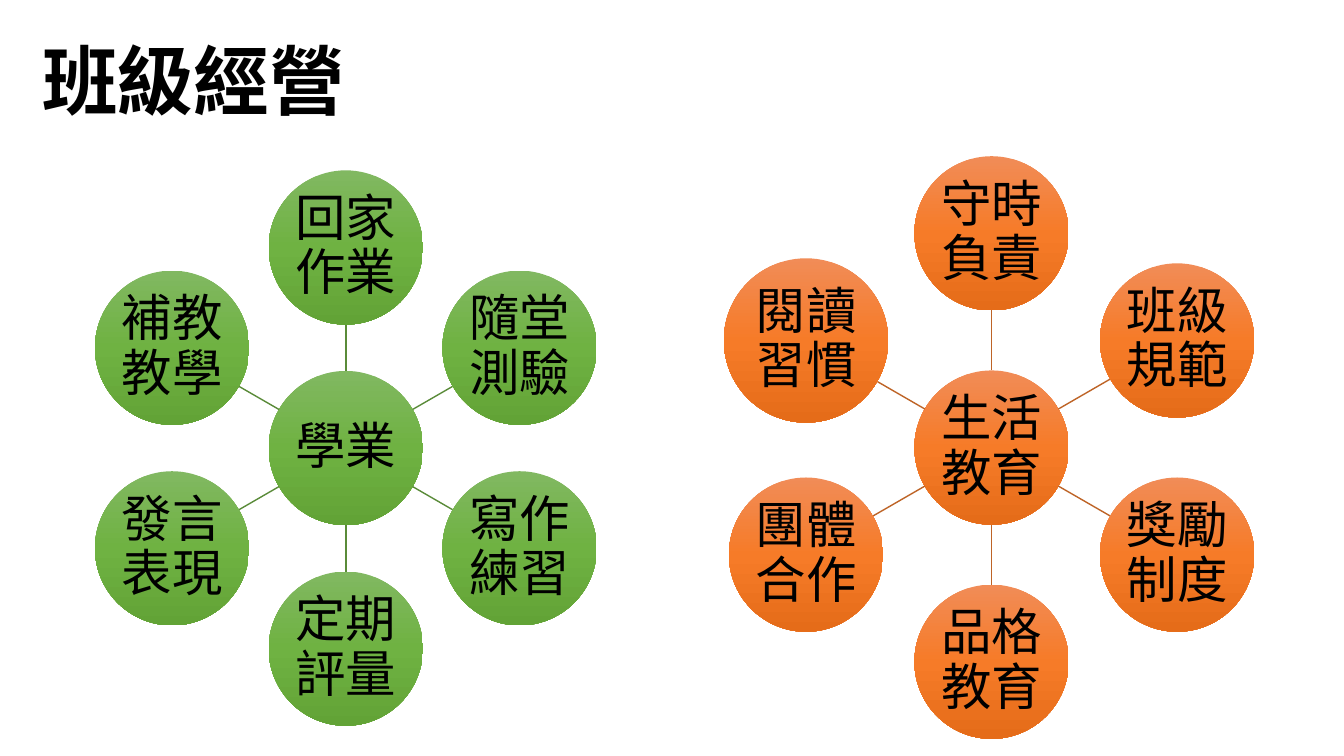
import copy
import math
from dataclasses import dataclass

import pptx
import pptx.dml.color
import pptx.enum.shapes
import pptx.enum.text
import pptx.oxml.ns
import pptx.util
from lxml import etree

Inches = pptx.util.Inches
Pt = pptx.util.Pt
qn = pptx.oxml.ns.qn


@dataclass(frozen=True)
class Theme:
    text: str = "000000"
    green: tuple = ("81B861", "6FB242", "62A336")
    green_line: str = "5A8B39"
    orange: tuple = ("F18C57", "F67B28", "E56C19")
    orange_line: str = "BE6427"
    title_font: str = "Calibri"
    body_font: str = "Noto Sans CJK SC"
    title_size: int = 54
    body_size: int = 36


THEME = Theme()


def rgb(value):
    return pptx.dml.color.RGBColor.from_string(value)


def apply_format(target, values):
    for name, value in values.items():
        setattr(target, name, value)


def write_text(shape, text, frame_format, paragraph_format, font_format):
    frame = shape.text_frame
    apply_format(frame, frame_format)
    paragraph = frame.paragraphs[0]
    apply_format(paragraph, {"line_spacing": 0.9, **paragraph_format})
    run = paragraph.add_run()
    run.text = text
    apply_format(run.font, font_format)
    run.font.color.rgb = rgb(THEME.text)
    east_asian = etree.SubElement(run.font._element, qn("a:ea"))
    east_asian.set("typeface", THEME.body_font)


def fill_gradient(shape, colours):
    shape.fill.gradient()
    shape.fill.gradient_angle = 270
    stop_list = shape._element.spPr.find(".//" + qn("a:gsLst"))
    stop_list.insert(1, copy.deepcopy(stop_list[0]))
    for index, (stop, colour) in enumerate(zip(shape.fill.gradient_stops, colours)):
        stop.position = index / 2
        stop.color.rgb = rgb(colour)


def add_title(slide, text, left, top, width, height):
    title = slide.shapes.title
    apply_format(title, {"left": Inches(left), "top": Inches(top),
                         "width": Inches(width), "height": Inches(height)})
    write_text(
        title, text,
        {"vertical_anchor": pptx.enum.text.MSO_ANCHOR.MIDDLE,
         "auto_size": pptx.enum.text.MSO_AUTO_SIZE.NONE},
        {"alignment": pptx.enum.text.PP_ALIGN.LEFT},
        {"name": THEME.title_font, "size": Pt(THEME.title_size), "bold": True})


def add_circle(slide, text, x, y, diameter, colours):
    circle = slide.shapes.add_shape(
        pptx.enum.shapes.MSO_SHAPE.OVAL, Inches(x - diameter / 2),
        Inches(y - diameter / 2), Inches(diameter), Inches(diameter))
    circle.shadow.inherit = False
    circle.line.fill.background()
    fill_gradient(circle, colours)
    margins = {f"margin_{side}": Inches(0.03)
               for side in ("left", "top", "right", "bottom")}
    write_text(
        circle, text,
        {**margins, "word_wrap": True,
         "vertical_anchor": pptx.enum.text.MSO_ANCHOR.MIDDLE},
        {"alignment": pptx.enum.text.PP_ALIGN.CENTER},
        {"name": THEME.body_font, "size": Pt(THEME.body_size)})


def add_spoke(slide, x, y, angle, start, end, colour):
    ends = [Inches(value) for distance in (start, end)
            for value in (x + distance * math.cos(angle), y + distance * math.sin(angle))]
    spoke = slide.shapes.add_connector(pptx.enum.shapes.MSO_CONNECTOR.STRAIGHT, *ends)
    spoke.line.color.rgb = rgb(colour)
    spoke.line.width = Pt(1)
    etree.SubElement(spoke._element.spPr, qn("a:effectLst"))


def add_wheel(slide, left, top, width, height, hub, topics, colours, line_colour,
              diameter=1.53):
    x, y = left + width / 2, top + height / 2
    orbit = (height - diameter) / 2
    add_circle(slide, hub, x, y, diameter, colours)
    for index, (topic, size) in enumerate(topics):
        angle = math.radians(360 / len(topics) * index - 90)
        add_spoke(slide, x, y, angle, diameter / 2, orbit - size / 2, line_colour)
        add_circle(slide, topic, x + orbit * math.cos(angle),
                   y + orbit * math.sin(angle), size, colours)


def main():
    presentation = pptx.Presentation()
    presentation.slide_width = Inches(13.33)
    presentation.slide_height = Inches(7.5)
    slide = presentation.slides.add_slide(presentation.slide_layouts[5])

    add_title(slide, "班級經營", 0.32, 0.12, 11.5, 1.45)
    academic = [(topic, 1.53) for topic in
                ("回家作業", "隨堂測驗", "寫作練習", "定期評量", "發言表現", "補教教學")]
    add_wheel(slide, 0.94, 1.69, 4.98, 5.51, "學業", academic,
              THEME.green, THEME.green_line)
    conduct = [(topic, 1.53) for topic in
               ("守時負責", "班級規範", "獎勵制度", "品格教育", "團體合作")]
    conduct.append(("閱讀習慣", 1.63))
    add_wheel(slide, 7.23, 1.55, 5.21, 5.78, "生活教育", conduct,
              THEME.orange, THEME.orange_line)

    presentation.save("out.pptx")


if __name__ == "__main__":
    main()
